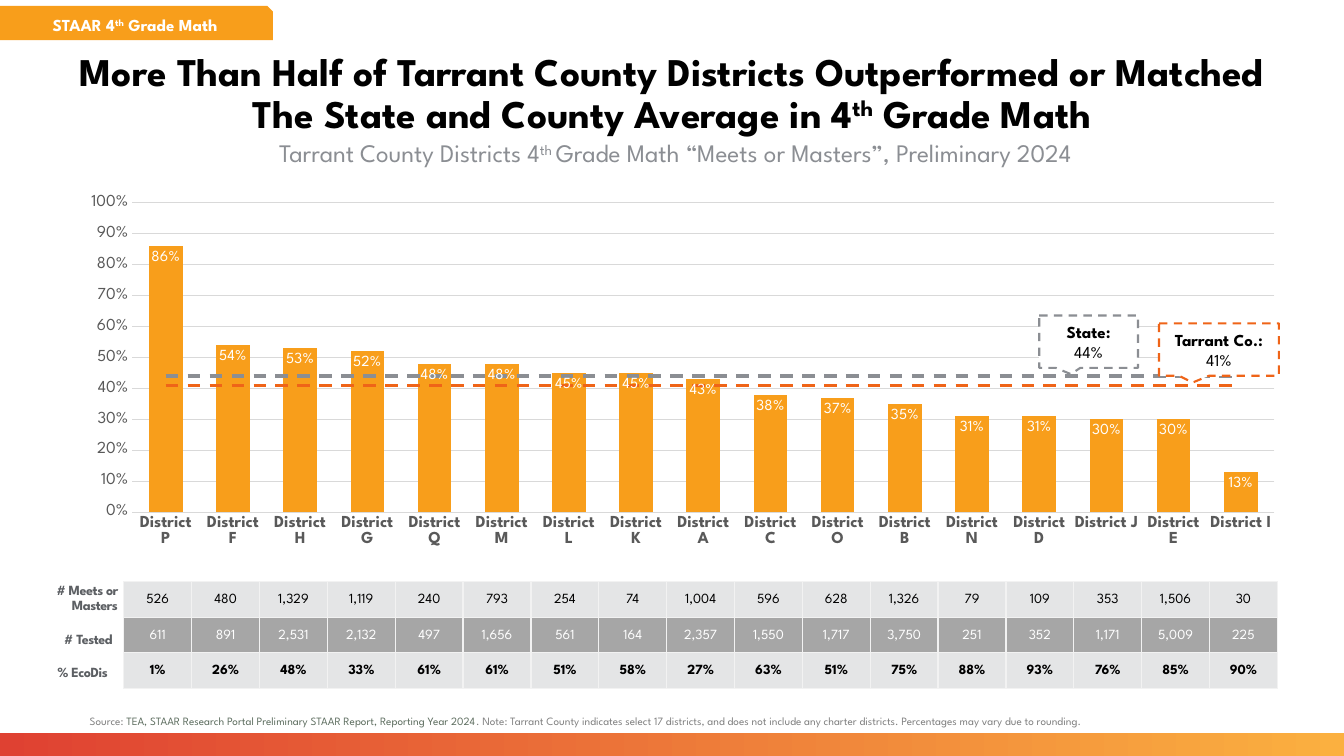
from copy import deepcopy
from dataclasses import dataclass
from typing import NamedTuple, Optional

from pptx import Presentation, util as u
from pptx.chart import data as chart_data
from pptx.dml.color import RGBColor
from pptx.enum import chart as charts, dml, shapes, text
from pptx.oxml import parse_xml
from pptx.oxml.ns import nsdecls, qn

ALIGN = text.PP_ALIGN
ANCHOR = text.MSO_ANCHOR


@dataclass(frozen=True)
class Theme:
    font: str = "League Spartan"
    black: str = "000000"
    white: str = "FFFFFF"
    orange: str = "F89E1B"
    dark_orange: str = "EF6418"
    red: str = "DF4132"
    amber: str = "FBB040"
    gray: str = "8B8E93"
    axis_text: str = "595959"
    grid: str = "D9D9D9"
    row_label: str = "5C5F63"
    light_row: str = "E4E5E6"
    dark_row: str = "A6A6A6"
    cell_border: str = "F2F2F2"
    note: str = "808080"
    citation: str = "5E6E60"
    title_size: float = 28
    subtitle_size: float = 18
    body_size: float = 12
    bar_label_size: float = 11
    table_size: float = 10
    note_size: float = 8


THEME = Theme()


class Box(NamedTuple):
    """Left, top, width and height in centimetres."""
    left: float
    top: float
    width: float
    height: float

    def lengths(self) -> list:
        return [u.Cm(value) for value in self]


class Run(NamedTuple):
    text: str
    raised: bool = False
    bold: Optional[bool] = None
    color: Optional[str] = None


class Average(NamedTuple):
    name: str
    value: float
    color: str
    box: Box
    tip: tuple


class TableRow(NamedTuple):
    label: str
    label_box: Box
    wrap: bool
    top: float
    values: str
    fill: str
    color: str
    bold: bool = False


TH = Run("th", raised=True)
DISTRICTS = "P F H G Q M L K A C O B N D J E I".split()
MEETS_OR_MASTERS = [0.86, 0.54, 0.53, 0.52, 0.48, 0.48, 0.45, 0.45, 0.43,
                    0.38, 0.37, 0.35, 0.31, 0.31, 0.3, 0.3, 0.13]
AVERAGES = [
    Average("State", 0.44, THEME.gray, Box(26.19, 7.95, 2.49, 1.32), (-0.18, 0.62)),
    Average("Tarrant Co.", 0.41, THEME.dark_orange, Box(29.21, 8.15, 3.02, 1.32), (-0.22, 0.63)),
]
TABLE_ROWS = [
    TableRow("# Meets or Masters", Box(0.81, 14.55, 2.31, 1.07), True, 14.66,
             "526 480 1,329 1,119 240 793 254 74 1,004 596 628 1,326 79 109 353 1,506 30",
             THEME.light_row, THEME.black),
    TableRow("# Tested", Box(1.47, 15.8, 1.65, 0.66), False, 15.56,
             "611 891 2,531 2,132 497 1,656 561 164 2,357 1,550 1,717 3,750 251 352 1,171 5,009 225",
             THEME.dark_row, THEME.white),
    TableRow("% EcoDis", Box(1.3, 16.64, 1.83, 0.66), False, 16.45,
             "1% 26% 48% 33% 61% 61% 51% 58% 27% 63% 51% 75% 88% 93% 76% 85% 90%",
             THEME.light_row, THEME.black, True),
]


def rgb(color: str) -> RGBColor:
    return RGBColor.from_string(color)


def set_font(font, size: float, color: str, bold: bool = False) -> None:
    font.name, font.size, font.bold = THEME.font, u.Pt(size), bold
    font.color.rgb = rgb(color)


def write(frame, *paragraphs: list, size: float, color: str = THEME.black, bold: bool = False,
          align=ALIGN.CENTER, anchor=ANCHOR.MIDDLE, spacing: Optional[float] = None,
          inset: float = 0.15, wrap: bool = True, tracking: int = 0) -> None:
    """Fill a text frame; each paragraph is a list of runs, tracking is in 1/100 pt."""
    frame.word_wrap, frame.vertical_anchor = wrap, anchor
    frame.margin_left = frame.margin_right = u.Cm(inset)
    frame.margin_top = frame.margin_bottom = u.Cm(min(inset, 0.15))
    for index, runs in enumerate(paragraphs):
        paragraph = frame.add_paragraph() if index else frame.paragraphs[0]
        paragraph.alignment, paragraph.line_spacing = align, spacing
        for item in runs:
            run = paragraph.add_run()
            run.text = item.text
            set_font(run.font, size, item.color or color, bold if item.bold is None else item.bold)
            properties = run._r.get_or_add_rPr()
            if item.raised:
                properties.set("baseline", "30000")
            if tracking:
                properties.set("spc", str(tracking))


def add_text(slide, box: Box, *paragraphs: list, **formatting) -> None:
    write(slide.shapes.add_textbox(*box.lengths()).text_frame, *paragraphs, **formatting)


def add_panel(slide, kind, box: Box, fill: Optional[str] = None):
    """Add a preset shape with no line or shadow."""
    shape = slide.shapes.add_shape(kind, *box.lengths())
    shape.shadow.inherit = False
    shape.line.fill.background()
    if fill:
        shape.fill.solid()
        shape.fill.fore_color.rgb = rgb(fill)
    return shape


def dash_line(line, color: str, width: float) -> None:
    line.color.rgb, line.width = rgb(color), u.Pt(width)
    line.dash_style = dml.MSO_LINE.DASH


def add_callout(slide, average: Average) -> None:
    shape = add_panel(slide, shapes.MSO_SHAPE.RECTANGULAR_CALLOUT, average.box, THEME.white)
    dash_line(shape.line, average.color, 1.5)
    shape.adjustments[0], shape.adjustments[1] = average.tip
    write(shape.text_frame, [Run(f"{average.name}:", bold=True)],
          [Run(f"{average.value:.0%}")], size=THEME.body_size)


def move_averages_to_lines(chart) -> None:
    """Turn every series after the first into a line on the same axes."""
    bar_chart = chart.plots[0]._element
    line_chart = parse_xml(f'<c:lineChart {nsdecls("c")}><c:grouping val="standard"/>'
                           '<c:varyColors val="0"/></c:lineChart>')
    for series in bar_chart.findall(qn("c:ser"))[1:]:
        for bar_only in series.findall(qn("c:invertIfNegative")):
            series.remove(bar_only)
        line_chart.append(series)
    for axis_id in bar_chart.findall(qn("c:axId")):
        line_chart.append(deepcopy(axis_id))
    bar_chart.addnext(line_chart)


def set_plot_area(chart, x: float, y: float, w: float, h: float) -> None:
    """Place the inner plot area, in fractions of the chart."""
    plot_area = chart._chartSpace.chart.plotArea
    for layout in plot_area.findall(qn("c:layout")):
        plot_area.remove(layout)
    sizes = "".join(f'<c:{key} val="{value}"/>' for key, value in zip("xywh", (x, y, w, h)))
    plot_area.insert(0, parse_xml(
        f'<c:layout {nsdecls("c")}><c:manualLayout><c:layoutTarget val="inner"/>'
        f'<c:xMode val="edge"/><c:yMode val="edge"/>{sizes}</c:manualLayout></c:layout>'))


def add_district_chart(slide, box: Box) -> None:
    data = chart_data.CategoryChartData(number_format="0%")
    data.categories = [f"District {letter}" for letter in DISTRICTS]
    data.add_series("Meets or Masters", MEETS_OR_MASTERS)
    for average in AVERAGES:
        data.add_series(average.name, [average.value] * len(DISTRICTS))
    chart = slide.shapes.add_chart(charts.XL_CHART_TYPE.COLUMN_CLUSTERED, *box.lengths(), data).chart
    chart.has_legend = chart.has_title = False
    set_font(chart.font, THEME.table_size, THEME.black)
    move_averages_to_lines(chart)
    set_plot_area(chart, 0.055, 0.032, 0.942, 0.804)

    bars, lines = list(chart.plots)
    bars.gap_width, bars.vary_by_categories = 100, False
    districts = bars.series[0]
    districts.format.fill.solid()
    districts.format.fill.fore_color.rgb = rgb(THEME.orange)
    labels = districts.data_labels
    labels.show_value, labels.position = True, charts.XL_LABEL_POSITION.INSIDE_END
    labels.number_format, labels.number_format_is_linked = "0%", False
    set_font(labels.font, THEME.bar_label_size, THEME.white)
    for series, average in zip(lines.series, AVERAGES):
        series.smooth = False
        series.marker.style = charts.XL_MARKER_STYLE.NONE
        dash_line(series.format.line, average.color, 2.25)

    category_axis, value_axis = chart.category_axis, chart.value_axis
    for axis in (category_axis, value_axis):
        axis.major_tick_mark = axis.minor_tick_mark = charts.XL_TICK_MARK.NONE
        set_font(axis.tick_labels.font, THEME.body_size, THEME.axis_text, axis is category_axis)
    value_axis.minimum_scale, value_axis.maximum_scale, value_axis.major_unit = 0, 1, 0.1
    value_axis.tick_labels.number_format = "0%"
    value_axis.tick_labels.number_format_is_linked = False
    value_axis.format.line.fill.background()
    for line in (category_axis.format.line, value_axis.major_gridlines.format.line):
        line.color.rgb, line.width = rgb(THEME.grid), u.Pt(0.75)


def add_table_row(slide, row: TableRow) -> None:
    add_text(slide, row.label_box, [Run(row.label)], size=THEME.table_size, color=THEME.row_label,
             bold=True, align=ALIGN.RIGHT if row.wrap else ALIGN.LEFT, spacing=0.9,
             wrap=row.wrap, tracking=-30)
    values = row.values.split()
    box = Box(3.12, row.top, 1.71 * len(values), 0.89)
    table = slide.shapes.add_table(1, len(values), *box.lengths()).table
    for column, cell, value in zip(table.columns, table.iter_cells(), values):
        column.width = u.Cm(1.71)
        write(cell.text_frame, [Run(value)], size=THEME.table_size, color=row.color, bold=row.bold)
        cell.vertical_anchor = ANCHOR.MIDDLE
        cell.margin_left = cell.margin_right = cell.margin_top = u.Cm(0.03)
        cell.margin_bottom = 0
        cell.fill.solid()
        cell.fill.fore_color.rgb = rgb(row.fill)
        for index, side in enumerate(("lnL", "lnR", "lnT", "lnB")):
            cell._tc.get_or_add_tcPr().insert(index, parse_xml(
                f'<a:{side} {nsdecls("a")} w="12700"><a:solidFill>'
                f'<a:srgbClr val="{THEME.cell_border}"/></a:solidFill></a:{side}>'))


def main() -> None:
    presentation = Presentation()
    presentation.slide_width, presentation.slide_height = u.Cm(33.87), u.Cm(19.05)
    slide = presentation.slides.add_slide(presentation.slide_layouts[6])

    footer = add_panel(slide, shapes.MSO_SHAPE.RECTANGLE, Box(0, 18.48, 33.87, 0.57))
    footer.fill.gradient()
    footer.fill.gradient_angle = 0
    for stop, color in zip(footer.fill.gradient_stops, (THEME.red, THEME.amber)):
        stop.color.rgb = rgb(color)

    add_text(slide, Box(1.22, 3.4, 31.6, 1.9),
             [Run("Tarrant County Districts 4"), Run("th ", raised=True),
              Run("Grade Math “Meets or Masters”, Preliminary 2024")],
             size=THEME.subtitle_size, color=THEME.gray, anchor=ANCHOR.TOP, spacing=0.9)
    add_text(slide, Box(1.65, 1.24, 30.56, 2.29),
             [Run("More Than Half of Tarrant County Districts Outperformed or Matched "
                  "The State and County Average in 4"), TH, Run(" Grade Math")],
             size=THEME.title_size, bold=True, spacing=0.9)
    add_district_chart(slide, Box(1.65, 4.8, 30.56, 9.7))
    for average in AVERAGES:
        add_callout(slide, average)
    for row in TABLE_ROWS:
        add_table_row(slide, row)
    tab = add_panel(slide, shapes.MSO_SHAPE.SNIP_1_RECTANGLE, Box(0, 0.15, 6.88, 0.86), THEME.orange)
    write(tab.text_frame, [Run("STAAR 4"), TH, Run(" Grade Math")],
          size=THEME.body_size, color=THEME.white, bold=True)
    add_text(slide, Box(2.01, 17.65, 30.2, 1.02),
             [Run("Source: "),
              Run("TEA, STAAR Research Portal Preliminary STAAR Report, Reporting Year 2024",
                  color=THEME.citation),
              Run(". Note: Tarrant County indicates select 17 districts, and does not include any "
                  "charter districts. Percentages may vary due to rounding.")],
             size=THEME.note_size, color=THEME.note, align=ALIGN.LEFT, inset=0.25)
    presentation.save("out.pptx")


if __name__ == "__main__":
    main()
